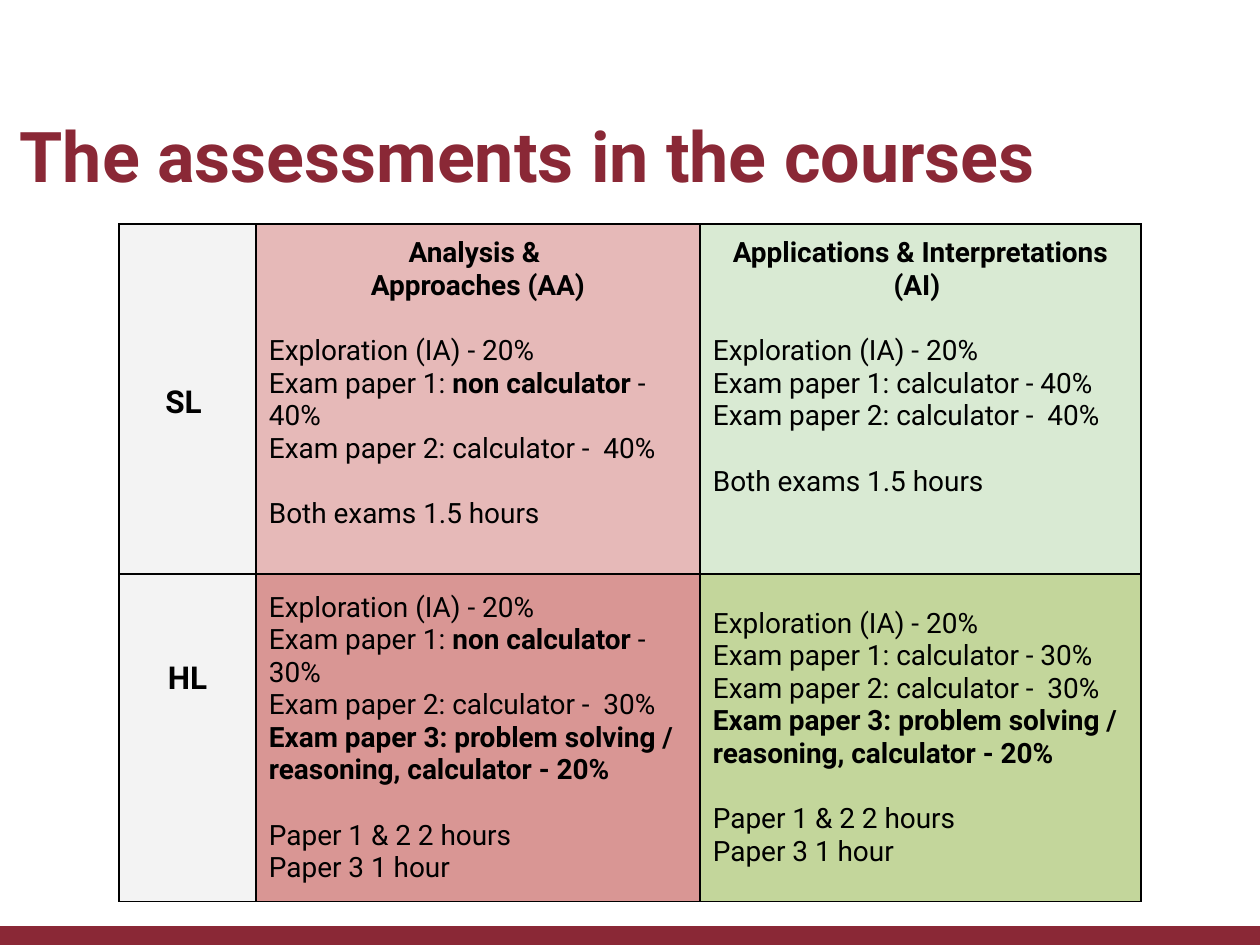
from typing import NamedTuple

from lxml import etree
from pptx import Presentation
from pptx import util as u
from pptx.dml.color import RGBColor
from pptx.enum import shapes, text
from pptx.oxml import ns

SLIDE_W, SLIDE_H = 1260, 945
EMU_PER_PX = 9144000 / SLIDE_W
FONT = "Roboto"

MAROON = RGBColor(0x8A, 0x28, 0x36)
BLACK = RGBColor(0, 0, 0)
GREY = RGBColor(0xF3, 0xF3, 0xF3)
LIGHT_RED = RGBColor(0xE6, 0xB9, 0xB8)
RED = RGBColor(0xD9, 0x96, 0x94)
LIGHT_GREEN = RGBColor(0xD9, 0xEA, 0xD3)
GREEN = RGBColor(0xC3, 0xD6, 0x9B)

CENTER, LEFT = text.PP_ALIGN.CENTER, text.PP_ALIGN.LEFT
TOP, MIDDLE = text.MSO_ANCHOR.TOP, text.MSO_ANCHOR.MIDDLE
CELL_MARGIN = 13
GAP = u.Pt(18.75)  # one text line at 16 pt


class Span(NamedTuple):
    words: str
    bold: bool = False


class Para(NamedTuple):
    spans: list[Span]
    align: text.PP_ALIGN = LEFT
    gap: bool = False


class Cell(NamedTuple):
    paras: list[Para]
    fill: RGBColor
    size: int = 16
    anchor: text.MSO_ANCHOR = TOP
    margin_top: int = CELL_MARGIN


def px(length: int) -> u.Emu:
    return u.Emu(round(length * EMU_PER_PX))


def heading(words: str) -> Para:
    return Para([Span(words, True)], CENTER)


def plain(words: str, gap: bool = False) -> Para:
    return Para([Span(words)], gap=gap)


def exams(kind: Span, share: int, gap: bool = False) -> list[Para]:
    """The exploration and the two exam papers every course has."""
    return [
        plain("Exploration (IA) - 20%", gap),
        Para([Span("Exam paper 1: "), kind, Span(f" - {share}%")]),
        plain(f"Exam paper 2: calculator -\u00a0 {share}%"),
    ]


def sl_course(headings: list[str], kind: Span) -> list[Para]:
    return [*map(heading, headings), *exams(kind, 40, gap=True),
            plain("Both exams 1.5 hours", gap=True)]


def hl_course(kind: Span) -> list[Para]:
    paper_3 = "Exam paper 3: problem solving / reasoning, calculator - 20%"
    return [*exams(kind, 30), Para([Span(paper_3, True)]),
            plain("Paper 1 & 2 2 hours", gap=True), plain("Paper 3 1 hour")]


def write(frame, paras: list[Para], size: int, color: RGBColor) -> None:
    for index, item in enumerate(paras):
        para = frame.paragraphs[0] if index == 0 else frame.add_paragraph()
        para.alignment = item.align
        if item.gap:
            para.space_before = GAP
        for part in item.spans:
            span = para.add_run()
            span.text = part.words
            span.font.color.rgb = color
            style = {"name": FONT, "size": u.Pt(size), "bold": part.bold}
            for name, value in style.items():
                setattr(span.font, name, value)


def add_borders(cell) -> None:
    """Draw thin black lines on all four sides of a table cell."""
    props = cell._tc.get_or_add_tcPr()
    for index, side in enumerate(("lnL", "lnR", "lnT", "lnB")):
        line = etree.Element(ns.qn(f"a:{side}"), w=str(u.Pt(1)))
        fill = etree.SubElement(line, ns.qn("a:solidFill"))
        etree.SubElement(fill, ns.qn("a:srgbClr"), val=str(BLACK))
        props.insert(index, line)


def fill_cell(cell, item: Cell) -> None:
    layout = {
        "margin_left": px(CELL_MARGIN), "margin_right": px(CELL_MARGIN),
        "margin_top": px(item.margin_top), "margin_bottom": px(CELL_MARGIN),
        "vertical_anchor": item.anchor,
    }
    for name, value in layout.items():
        setattr(cell, name, value)
    cell.fill.solid()
    cell.fill.fore_color.rgb = item.fill
    add_borders(cell)
    write(cell.text_frame, item.paras, item.size, BLACK)


NON_CALCULATOR = Span("non calculator", True)
CALCULATOR = Span("calculator")
COLUMNS = [137, 444, 441]
ROWS = [350, 319]
CELLS = [
    [
        Cell([heading("SL ")], GREY, size=18, margin_top=160),
        Cell(sl_course(["Analysis & ", "Approaches (AA)"], NON_CALCULATOR),
             LIGHT_RED),
        Cell(sl_course(["Applications & Interpretations (AI) "], CALCULATOR),
             LIGHT_GREEN),
    ],
    [
        Cell([heading("HL")], GREY, size=18, margin_top=86),
        Cell(hl_course(NON_CALCULATOR), RED, anchor=MIDDLE),
        Cell(hl_course(CALCULATOR), GREEN, anchor=MIDDLE),
    ],
]


def main() -> None:
    deck = Presentation()
    deck.slide_width, deck.slide_height = px(SLIDE_W), px(SLIDE_H)
    page = deck.slides.add_slide(deck.slide_layouts[6])

    # Footer bar
    bar = page.shapes.add_shape(shapes.MSO_SHAPE.RECTANGLE,
                                px(0), px(926), px(SLIDE_W), px(19))
    bar.shadow.inherit = False
    bar.fill.solid()
    bar.fill.fore_color.rgb = MAROON
    bar.line.fill.background()

    # Title
    box = page.shapes.add_textbox(px(0), px(88), px(1072), px(132))
    box.text_frame.word_wrap = True
    box.text_frame.vertical_anchor = MIDDLE
    write(box.text_frame, [heading("The assessments in the courses ")], 40, MAROON)

    # Assessment table
    table = page.shapes.add_table(len(ROWS), len(COLUMNS), px(119), px(224),
                                  px(sum(COLUMNS)), px(sum(ROWS))).table
    table.first_row = table.horz_banding = False
    for column, width in zip(table.columns, COLUMNS):
        column.width = px(width)
    for row, height, items in zip(table.rows, ROWS, CELLS):
        row.height = px(height)
        for cell, item in zip(row.cells, items):
            fill_cell(cell, item)

    deck.save("out.pptx")


if __name__ == "__main__":
    main()
